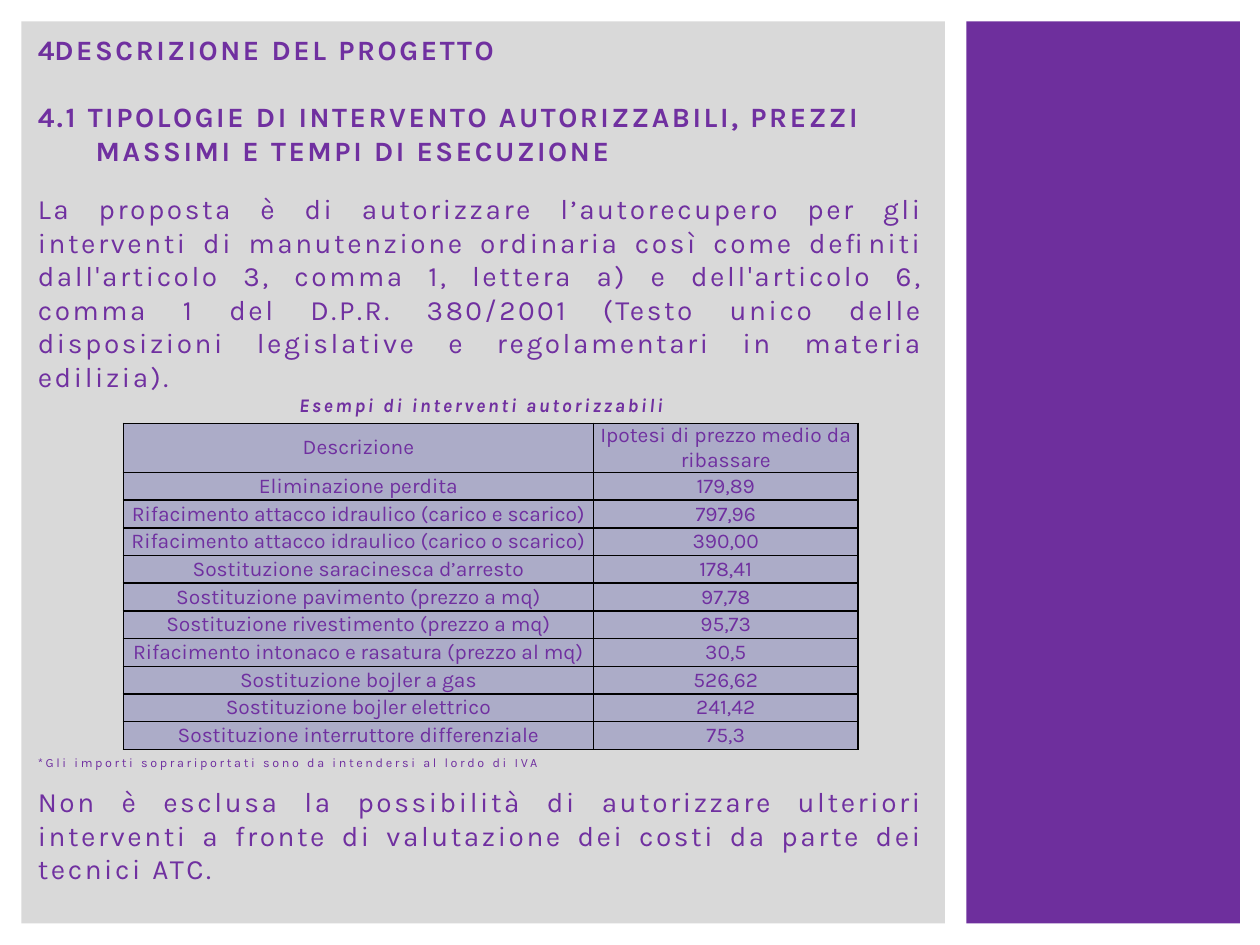
from lxml.etree import SubElement
from pptx import Presentation
from pptx.dml.color import RGBColor
from pptx.enum.shapes import MSO_SHAPE
from pptx.enum.text import MSO_ANCHOR, MSO_AUTO_SIZE, PP_ALIGN
from pptx.oxml import parse_xml
from pptx.oxml.ns import nsdecls, qn
from pptx.util import Inches, Pt

FONT, INK, BLACK = "Karla", "7030A0", "000000"
PURPLE, GREY, CELL, WHITE = "6E2F9D", "D9D9D9", "ACACC8", "FFFFFF"
WIDTH, HEIGHT, MARGIN = 10, 7.5, 0.17
LINE_FACTOR = 1.2
LEFT, CENTER, JUSTIFY = PP_ALIGN.LEFT, PP_ALIGN.CENTER, PP_ALIGN.JUSTIFY

PANELS = [(MARGIN, 7.33, GREY), (7.67, 2.17, PURPLE)]

PARAGRAPHS = [
    dict(text="DESCRIZIONE DEL PROGETTO", bold=True, number=4),
    dict(text="4.1 TIPOLOGIE DI INTERVENTO AUTORIZZABILI, PREZZI", bold=True, before=19.2),
    dict(text="MASSIMI E TEMPI DI ESECUZIONE", bold=True, margin=0.46),
    dict(text="La proposta è di autorizzare l’autorecupero per gli interventi di "
              "manutenzione ordinaria così come definiti dall'articolo 3, comma 1, "
              "lettera a) e dell'articolo 6, comma 1 del D.P.R. 380/2001 (Testo unico "
              "delle disposizioni legislative e regolamentari in materia edilizia).",
         align=JUSTIFY, before=14),
    dict(text="Esempi di interventi autorizzabili", size=11, bold=True, italic=True,
         align=CENTER),
    dict(text="*Gli importi soprariportati sono da intendersi al lordo di IVA",
         size=7.2, align=JUSTIFY, before=193.4),
    dict(text="Non è esclusa la possibilità di autorizzare ulteriori interventi a fronte "
              "di valutazione dei costi da parte dei tecnici ATC.",
         align=JUSTIFY, before=8.4),
]

PRICES = [
    ("Descrizione", "Ipotesi di prezzo medio da ribassare"),
    ("Eliminazione perdita", "179,89"),
    ("Rifacimento attacco idraulico (carico e scarico)", "797,96"),
    ("Rifacimento attacco idraulico (carico o scarico)", "390,00"),
    ("Sostituzione saracinesca d’arresto", "178,41"),
    ("Sostituzione pavimento (prezzo a mq)", "97,78"),
    ("Sostituzione rivestimento (prezzo a mq)", "95,73"),
    ("Rifacimento intonaco e rasatura (prezzo al mq)", "30,5"),
    ("Sostituzione bojler a gas", "526,62"),
    ("Sostituzione bojler elettrico", "241,42"),
    ("Sostituzione interruttore differenziale", "75,3"),
]
COLUMNS = [3.73, 2.1]
ROWS = [0.39] + [0.22] * (len(PRICES) - 1)


def paint(fill, color):
    fill.solid()
    fill.fore_color.rgb = RGBColor.from_string(color)


def style_runs(para, size, bold=False, italic=False):
    for span in para.runs:
        font = span.font
        font.name, font.size, font.bold, font.italic = FONT, Pt(size), bold, italic
        paint(font.fill, INK)


def write_paragraph(para, text, size=16, bold=False, italic=False, align=LEFT,
                    before=0, margin=0, number=None):
    para.text = text
    props = para._p.get_or_add_pPr()
    props.set("marL", str(Inches(margin)))
    props.set("indent", str(Inches(-0.38 if number else 0)))
    if number:
        SubElement(SubElement(props, qn("a:buClr")), qn("a:srgbClr"), val=PURPLE)
        SubElement(props, qn("a:buAutoNum"), type="arabicPlain", startAt=str(number))
    else:
        SubElement(props, qn("a:buNone"))
    para.alignment = align
    para.line_spacing = Pt(size * LINE_FACTOR)
    para.space_before, para.space_after = Pt(before), Pt(0)
    style_runs(para, size, bold, italic)
    for span in para.runs:
        span.font._element.set("spc", "150")


def write_cell(cell, text):
    cell.text = text
    cell.vertical_anchor = MSO_ANCHOR.MIDDLE
    cell.margin_left = cell.margin_right = Inches(0.05)
    cell.margin_top = cell.margin_bottom = 0
    para = cell.text_frame.paragraphs[0]
    para.alignment = CENTER
    style_runs(para, 12)
    paint(cell.fill, CELL)
    for place, side in enumerate(("lnL", "lnR", "lnT", "lnB")):
        cell._tc.tcPr.insert(place, parse_xml(
            f'<a:{side} {nsdecls("a")} w="{Pt(1)}"><a:solidFill>'
            f'<a:srgbClr val="{BLACK}"/></a:solidFill></a:{side}>'))


def main():
    """Build the slide on authorised works and their maximum prices."""
    deck = Presentation()
    deck.slide_width, deck.slide_height = Inches(WIDTH), Inches(HEIGHT)
    page = deck.slides.add_slide(deck.slide_layouts[1])
    paint(page.background.fill, WHITE)
    title, body = page.placeholders
    title.element.getparent().remove(title.element)

    for left, width, color in PANELS:
        panel = page.shapes.add_shape(
            MSO_SHAPE.RECTANGLE, Inches(left), Inches(MARGIN),
            Inches(width), Inches(HEIGHT - 2 * MARGIN))
        panel.shadow.inherit = False
        paint(panel.fill, color)
        panel.line.fill.background()
        body.element.addprevious(panel.element)

    body.left, body.top = Inches(0.2), Inches(0.21)
    body.width, body.height = Inches(7.24), Inches(7.29)
    frame = body.text_frame
    frame.word_wrap, frame.auto_size = True, MSO_AUTO_SIZE.NONE
    frame.vertical_anchor = MSO_ANCHOR.TOP
    for index, content in enumerate(PARAGRAPHS):
        para = frame.add_paragraph() if index else frame.paragraphs[0]
        write_paragraph(para, **content)

    table = page.shapes.add_table(
        len(ROWS), len(COLUMNS), Inches(0.98), Inches(3.36),
        Inches(sum(COLUMNS)), Inches(sum(ROWS))).table
    for column, width in zip(table.columns, COLUMNS):
        column.width = Inches(width)
    for row, height, texts in zip(table.rows, ROWS, PRICES):
        row.height = Inches(height)
        for cell, text in zip(row.cells, texts):
            write_cell(cell, text)

    deck.save("out.pptx")


if __name__ == "__main__":
    main()
